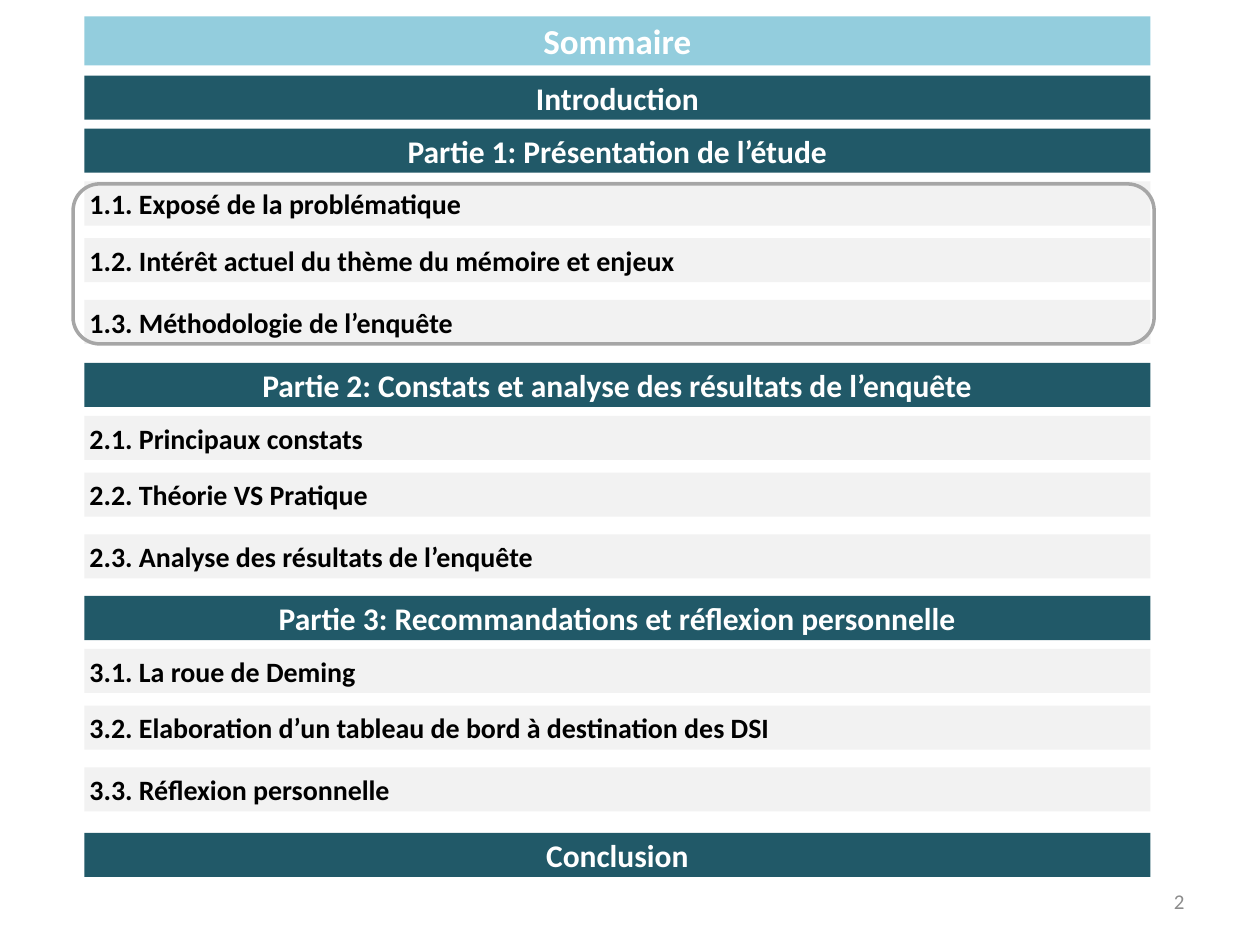
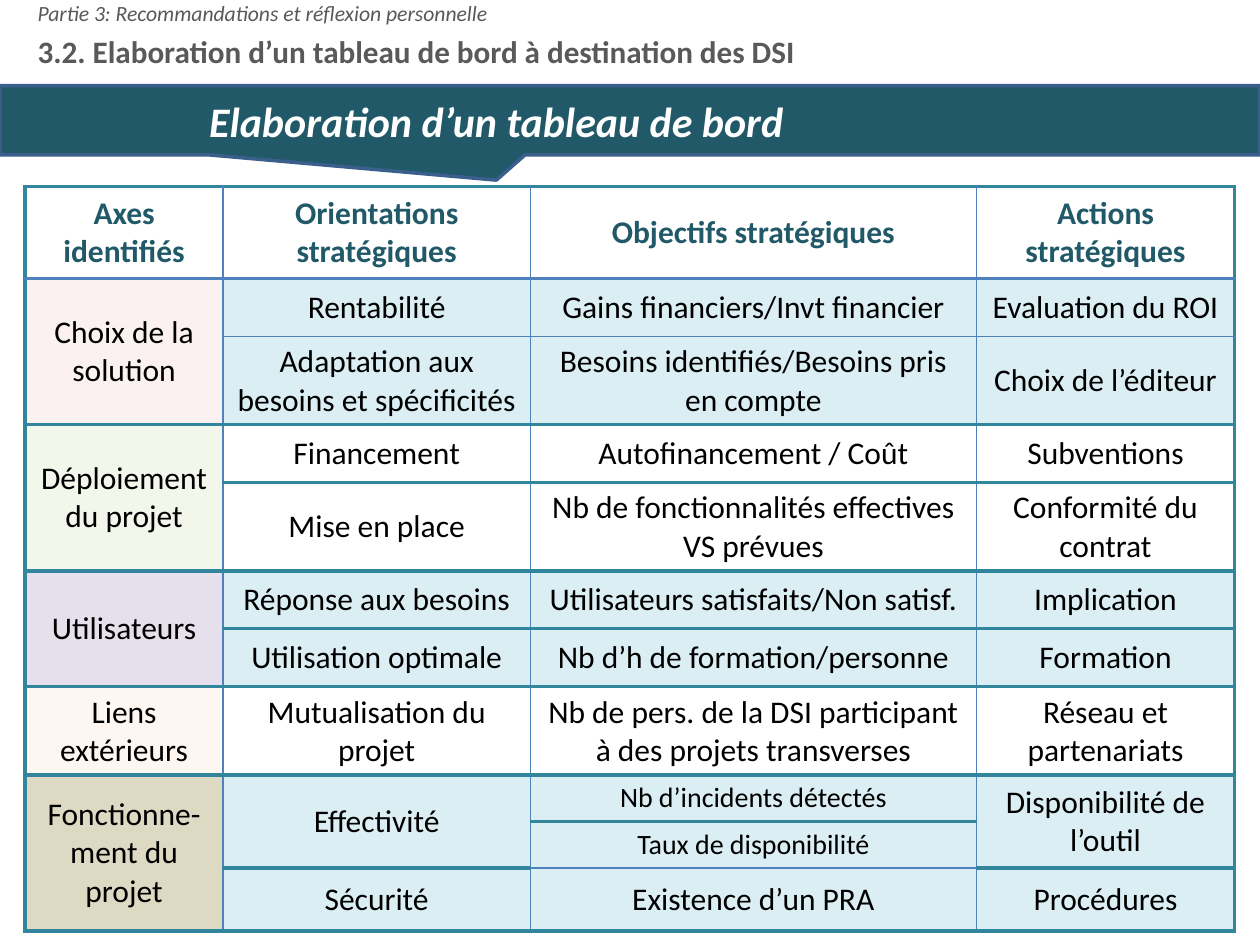
from dataclasses import dataclass
from typing import Optional

from lxml import etree
from pptx import Presentation
from pptx import util as u
from pptx.dml.color import RGBColor
from pptx.enum import shapes, text
from pptx.oxml import ns

# Shared colours and font
FONT = "Calibri"
DARK = RGBColor(0x21, 0x59, 0x68)
SKY = RGBColor(0x93, 0xCD, 0xDD)
PALE = RGBColor(0xDB, 0xEE, 0xF4)
LIGHT = RGBColor(0xF2, 0xF2, 0xF2)
WHITE = RGBColor(0xFF, 0xFF, 0xFF)
BLACK = RGBColor(0, 0, 0)
GREY = RGBColor(0xA6, 0xA6, 0xA6)
FAINT = RGBColor(0x8C, 0x8C, 0x8C)
SLATE = RGBColor(0x59, 0x59, 0x59)
NAVY = RGBColor(0x3A, 0x5F, 0x8C)
BLUE = RGBColor(0x4F, 0x81, 0xBD)
TEAL = RGBColor(0x31, 0x85, 0x9C)
ROSE = RGBColor(0xE6, 0xB9, 0xB8)
GREEN = RGBColor(0xC3, 0xD6, 0x9B)
LILAC = RGBColor(0xE6, 0xE0, 0xEC)
PEACH = RGBColor(0xFC, 0xD5, 0xB5)
SAND = RGBColor(0xDD, 0xD9, 0xC3)

LEFT, MID, RIGHT = text.PP_ALIGN.LEFT, text.PP_ALIGN.CENTER, text.PP_ALIGN.RIGHT
CENTRE, BOTTOM = text.MSO_ANCHOR.MIDDLE, text.MSO_ANCHOR.BOTTOM
RECT = shapes.MSO_SHAPE.RECTANGLE


@dataclass(frozen=True)
class Style:
    size: float
    color: RGBColor
    bold: bool = False
    italic: bool = False
    align: int = LEFT
    before: float = 0


@dataclass(frozen=True)
class Band:
    style: Style
    fill: RGBColor
    high: float
    pad: tuple
    wrap: bool


@dataclass(frozen=True)
class Part:
    top: float
    name: str
    items: tuple


@dataclass(frozen=True)
class Axis:
    first: int
    last: int
    fill: RGBColor
    alpha: Optional[int]
    body: RGBColor


@dataclass(frozen=True)
class Edge:
    color: RGBColor
    width: float


def put(obj, vals: dict) -> None:
    for key, val in vals.items():
        setattr(obj, key, val)


def write(para, words: str, style: Style) -> None:
    put(para, {"alignment": style.align, "space_before": u.Pt(style.before)})
    run = para.add_run()
    run.text = words
    put(run.font, {"name": FONT, "size": u.Pt(style.size), "bold": style.bold,
                   "italic": style.italic})
    run.font.color.rgb = style.color


def frame(shape, pad: tuple, anchor=CENTRE, wrap: bool = True):
    left, top, right, base = map(u.Inches, pad)
    body = shape.text_frame
    put(body, {"margin_left": left, "margin_top": top, "margin_right": right,
               "margin_bottom": base, "vertical_anchor": anchor, "word_wrap": wrap})
    return body


def shape(slide, kind, box: tuple, fill: Optional[RGBColor] = None,
          edge: Optional[Edge] = None):
    item = slide.shapes.add_shape(kind, *map(u.Inches, box))
    item.shadow.inherit = False
    if fill is None:
        item.fill.background()
    else:
        item.fill.solid()
        item.fill.fore_color.rgb = fill
    if edge is None:
        item.line.fill.background()
    else:
        item.line.color.rgb = edge.color
        item.line.width = u.Pt(edge.width)
    return item


def label(slide, box: tuple, lines: list, anchor=CENTRE) -> None:
    item = slide.shapes.add_textbox(*map(u.Inches, box))
    body = frame(item, (0.1, 0.05, 0.1, 0.05), anchor)
    for num, (words, style) in enumerate(lines):
        para = body.add_paragraph() if num else body.paragraphs[0]
        write(para, words, style)


# Slide 1: summary bands
BAR = (0.06, 0.05, 0.06, 0.05)
TITLE = Band(Style(20, WHITE, True, align=MID), SKY, 0.39, BAR, False)
HEAD = Band(Style(18, WHITE, True, align=MID), DARK, 0.35, BAR, False)
ITEM = Band(Style(16, BLACK, True), LIGHT, 0.35, (0.04, 0, 0, 0), True)
STEPS = (0.42, 0.87, 1.36)
DEMAND = "Elaboration d’un tableau de bord à destination des DSI"
LAST = "Partie 3: Recommandations et réflexion personnelle"
PARTS = (
    Part(1.02, "Partie 1: Présentation de l’étude",
         ("1.1. Exposé de la problématique",
          "1.2. Intérêt actuel du thème du mémoire et enjeux",
          "1.3. Méthodologie de l’enquête")),
    Part(2.88, "Partie 2: Constats et analyse des résultats de l’enquête",
         ("2.1. Principaux constats", "2.2. Théorie VS Pratique",
          "2.3. Analyse des résultats de l’enquête")),
    Part(4.73, LAST,
         ("3.1. La roue de Deming", "3.2. " + DEMAND,
          "3.3. Réflexion personnelle")),
)


def band(slide, kind: Band, top: float, words: str) -> None:
    item = shape(slide, RECT, (0.67, top, 8.46, kind.high), kind.fill)
    write(frame(item, kind.pad, wrap=kind.wrap).paragraphs[0], words, kind.style)


def summary(slide) -> None:
    band(slide, TITLE, 0.13, "Sommaire")
    band(slide, HEAD, 0.6, "Introduction")
    for part in PARTS:
        band(slide, HEAD, part.top, part.name)
        for step, words in zip(STEPS, part.items):
            band(slide, ITEM, part.top + step, words)
    band(slide, HEAD, 6.61, "Conclusion")
    # Frame around the current part
    shape(slide, shapes.MSO_SHAPE.ROUNDED_RECTANGLE, (0.58, 1.46, 8.58, 1.27),
          edge=Edge(GREY, 2))
    label(slide, (7.17, 6.95, 2.33, 0.4), [("2", Style(12, FAINT, align=RIGHT))])


# Slide 2: dashboard table; None continues the cell above
COLS = (1.57, 2.44, 3.54, 2.05)
ROWS = (0.73, 0.46, 0.7, 0.46, 0.7, 0.46, 0.46, 0.7, 0.37, 0.37, 0.5)
GRID = (
    ("Axes identifiés", "Orientations\nstratégiques", "Objectifs stratégiques",
     "Actions stratégiques"),
    ("Choix de la solution", "Rentabilité", "Gains financiers/Invt financier",
     "Evaluation du ROI"),
    (None, "Adaptation aux besoins et spécificités",
     "Besoins identifiés/Besoins pris en compte", "Choix de l’éditeur"),
    ("Déploiement du projet", "Financement", "Autofinancement / Coût", "Subventions"),
    (None, "Mise en place", "Nb de fonctionnalités effectives VS prévues",
     "Conformité du contrat"),
    ("Utilisateurs", "Réponse aux besoins", "Utilisateurs satisfaits/Non satisf.",
     "Implication"),
    (None, "Utilisation optimale", "Nb d’h de formation/personne", "Formation"),
    ("Liens extérieurs", "Mutualisation du projet",
     "Nb de pers. de la DSI participant à des projets transverses",
     "Réseau et partenariats"),
    ("Fonctionne-ment du projet", "Effectivité", "Nb d’incidents détectés",
     "Disponibilité de l’outil"),
    (None, None, "Taux de disponibilité", None),
    (None, "Sécurité", "Existence d’un PRA", "Procédures"),
)
AXES = (
    Axis(1, 2, ROSE, 20, PALE),
    Axis(3, 4, GREEN, 20, WHITE),
    Axis(5, 6, LILAC, None, PALE),
    Axis(7, 7, PEACH, 20, WHITE),
    Axis(8, 10, SAND, None, PALE),
)
THIN, THICK, RULE = Edge(BLUE, 1), Edge(TEAL, 2.25), Edge(BLUE, 2)
TOP = Style(18, DARK, True, align=MID)
CELL = Style(18, BLACK, align=MID)
SMALL = Style(16, BLACK, align=MID)


def below(row: int, col: int) -> Edge:
    """Line under a row; -1 is the top of the table."""
    if row == 0:
        return RULE
    return THIN if row == 1 or (row, col) == (9, 2) else THICK


def border(cell, edges: dict) -> None:
    props = cell._tc.get_or_add_tcPr()
    for num, (side, edge) in enumerate(edges.items()):
        line = etree.Element(ns.qn("a:ln" + side), w=str(u.Pt(edge.width)))
        fill = etree.SubElement(line, ns.qn("a:solidFill"))
        etree.SubElement(fill, ns.qn("a:srgbClr"), val=str(edge.color))
        props.insert(num, line)


def paint(cell, color: RGBColor, alpha: Optional[int] = None) -> None:
    cell.fill.solid()
    cell.fill.fore_color.rgb = color
    if alpha is not None:
        tint = cell._tc.tcPr.find(".//" + ns.qn("a:srgbClr"))
        etree.SubElement(tint, ns.qn("a:alpha"), val=str(alpha * 1000))


def fill(cell, row: int, col: int) -> None:
    axis = next((a for a in AXES if a.first <= row <= a.last), None)
    if axis is None:
        cell.fill.background()
    elif col == 0:
        paint(cell, axis.fill, axis.alpha)
    else:
        paint(cell, axis.body)


def board(slide) -> None:
    box = map(u.Inches, (0.2, 1.48, sum(COLS), sum(ROWS)))
    table = slide.shapes.add_table(len(ROWS), len(COLS), *box).table
    put(table, {"first_row": False, "horz_banding": False})
    for col, wide in zip(table.columns, COLS):
        col.width = u.Inches(wide)
    for row, high in zip(table.rows, ROWS):
        row.height = u.Inches(high)
    for row, line in enumerate(GRID):
        for col, words in enumerate(line):
            if words is None:
                continue
            # Merge with the empty cells below
            end = row
            while end + 1 < len(GRID) and GRID[end + 1][col] is None:
                end += 1
            cell = table.cell(row, col)
            if end > row:
                cell.merge(table.cell(end, col))
            cell.vertical_anchor = CENTRE
            style = TOP if row == 0 else SMALL if col == 2 and row in (8, 9) else CELL
            body = cell.text_frame
            for num, piece in enumerate(words.split("\n")):
                para = body.add_paragraph() if num else body.paragraphs[0]
                write(para, piece, style)
            edges = {"L": THIN if col else THICK,
                     "R": THIN if col + 1 < len(COLS) else THICK,
                     "T": below(row - 1, col), "B": below(end, col)}
            for step in range(row, end + 1):
                part = table.cell(step, col)
                fill(part, row, col)
                border(part, edges)


def detail(slide) -> None:
    # Callout under the heading
    flag = shape(slide, shapes.MSO_SHAPE.RECTANGULAR_CALLOUT, (0, 0.68, 10, 0.55),
                 DARK, Edge(NAVY, 2))
    flag.adjustments[0], flag.adjustments[1] = -0.106, 0.863
    body = frame(flag, (1.66, 0.05, 0.1, 0.05))
    write(body.paragraphs[0], "Elaboration d’un tableau de bord",
          Style(24, WHITE, True, True))
    board(slide)
    label(slide, (0.2, 0, 9.49, 0.6),
          [(LAST, Style(12.4, SLATE, italic=True, before=2.5)),
           ("3.2. " + DEMAND, Style(17.8, SLATE, True, before=3.5))], BOTTOM)


def main() -> None:
    deck = Presentation()
    put(deck, {"slide_width": u.Inches(10), "slide_height": u.Inches(7.5)})
    for draw in (summary, detail):
        draw(deck.slides.add_slide(deck.slide_layouts[6]))
    deck.save("out.pptx")


if __name__ == "__main__":
    main()
